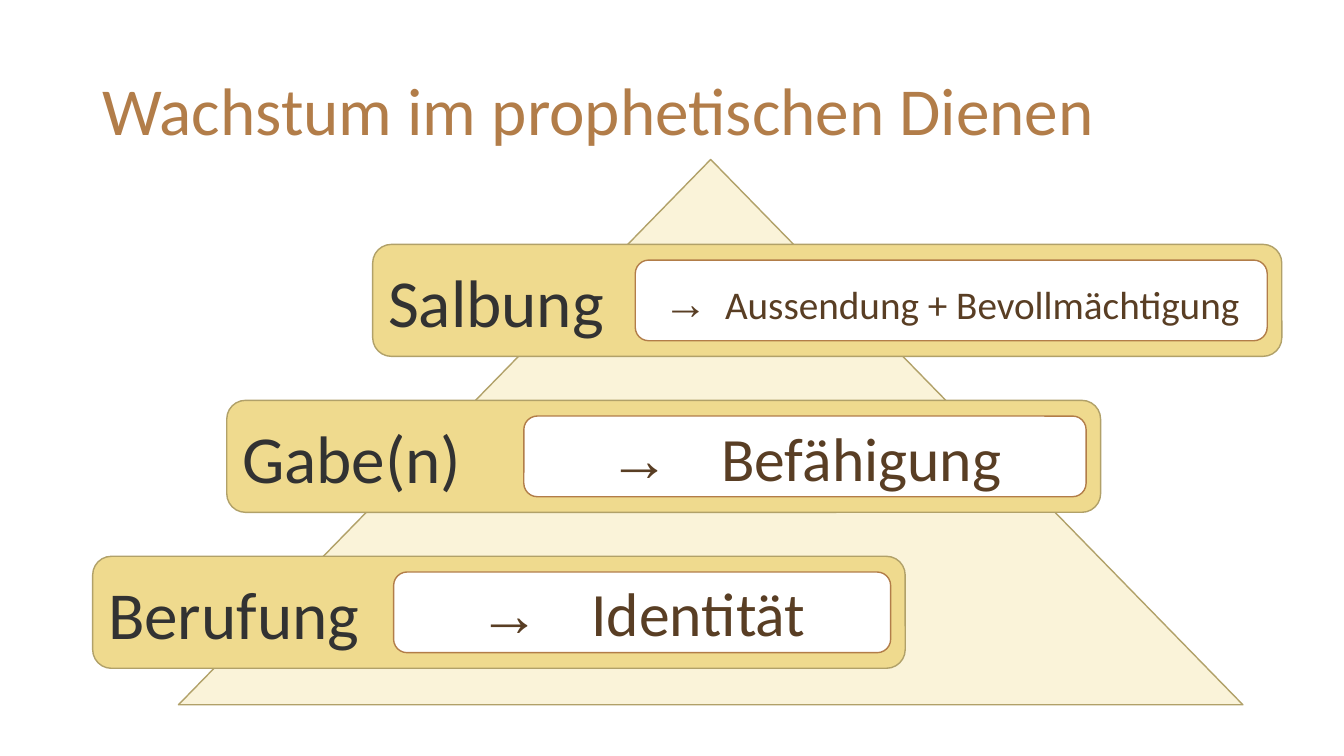
from dataclasses import dataclass

from pptx import Presentation
from pptx.dml.color import RGBColor as Rgb
from pptx.enum.shapes import MSO_SHAPE as Kind
from pptx.enum.text import MSO_ANCHOR as Anchor, PP_ALIGN as Align
from pptx.util import Pt


@dataclass(frozen=True)
class Theme:
    """Colours, fonts and type sizes of the slide."""
    title: str = "B27D49"
    label: str = "323232"
    goal: str = "593E24"
    peak: str = "FAF3D9"
    bar: str = "EFDA8E"
    edge: str = "B1A169"
    white: str = "FFFFFF"
    font: str = "Calibri"
    sign: str = "Arial"
    big: int = 48
    mid: int = 44
    arrow: int = 32
    small: int = 28


def write(para, text, *, size, color, font, track=0):
    """Add a run of text in the given format."""
    run = para.add_run()
    run.text = text
    run.font.size = Pt(size)
    run.font.name = font
    run.font.color.rgb = Rgb.from_string(color)
    if track:
        run.font._element.set("spc", str(round(track * 100)))


class Painter:
    """Draw the elements of one slide in one theme."""

    def __init__(self, slide, theme):
        self.slide = slide
        self.theme = theme

    def frame(self, shape, anchor=Anchor.MIDDLE, align=Align.LEFT):
        frame = shape.text_frame
        frame.word_wrap = True
        frame.vertical_anchor = anchor
        para = frame.paragraphs[0]
        para.alignment = align
        return para

    def shape(self, kind, box, fill, edge):
        shape = self.slide.shapes.add_shape(kind, *map(Pt, box))
        shape.shadow.inherit = False
        shape.fill.solid()
        shape.fill.fore_color.rgb = Rgb.from_string(fill)
        shape.line.color.rgb = Rgb.from_string(edge)
        shape.line.width = Pt(1)
        return shape

    def title(self, text, box):
        look = self.theme
        para = self.frame(self.slide.shapes.add_textbox(*map(Pt, box)))
        para.line_spacing = 0.9
        write(para, text, size=look.big, color=look.title, font=look.font)

    def peak(self, box):
        look = self.theme
        self.shape(Kind.FLOWCHART_EXTRACT, box, look.peak, look.edge)

    def bar(self, text, box):
        look = self.theme
        shape = self.shape(Kind.ROUNDED_RECTANGLE, box, look.bar, look.edge)
        write(self.frame(shape), text,
              size=look.big, color=look.label, font=look.font)

    def goal(self, text, box, small):
        look = self.theme
        shape = self.shape(Kind.ROUNDED_RECTANGLE, box, look.white, look.title)
        anchor = Anchor.BOTTOM if small else Anchor.MIDDLE
        para = self.frame(shape, anchor, Align.CENTER)
        tip, size = (look.arrow, look.small) if small else (look.mid, look.mid)
        write(para, "→", size=tip, color=look.goal, font=look.sign)
        write(para, " ", size=look.mid, color=look.goal, font=look.sign,
              track=0 if small else 24.5)
        write(para, text, size=size, color=look.goal, font=look.font)


def main():
    deck = Presentation()
    deck.slide_width, deck.slide_height = Pt(960), Pt(540)
    slide = deck.slides.add_slide(deck.slide_layouts[6])
    art = Painter(slide, Theme())

    art.title("Wachstum im prophetischen Dienen", (66, 28.75, 828, 104.4))
    art.peak((127.5, 113.9, 760.3, 389.5))

    base, step, high = 397.4, 111.4, 80
    inner, side = 57.6, 10.4
    steps = [
        ("Berufung", "Identität", 66.2, 580.4, 355, False),
        ("Gabe(n)", "Befähigung", 162, 624.2, 401.6, False),
        ("Salbung", "Aussendung + Bevollmächtigung", 266.2, 649.4, 451.4, True),
    ]
    for row, (label, goal, left, wide, span, small) in enumerate(steps):
        top = base - row * step
        art.bar(label, (left, top, wide, high))
        start = left + wide - side - span
        art.goal(goal, (start, top + (high - inner) / 2, span, inner), small)

    deck.save("out.pptx")


if __name__ == "__main__":
    main()
